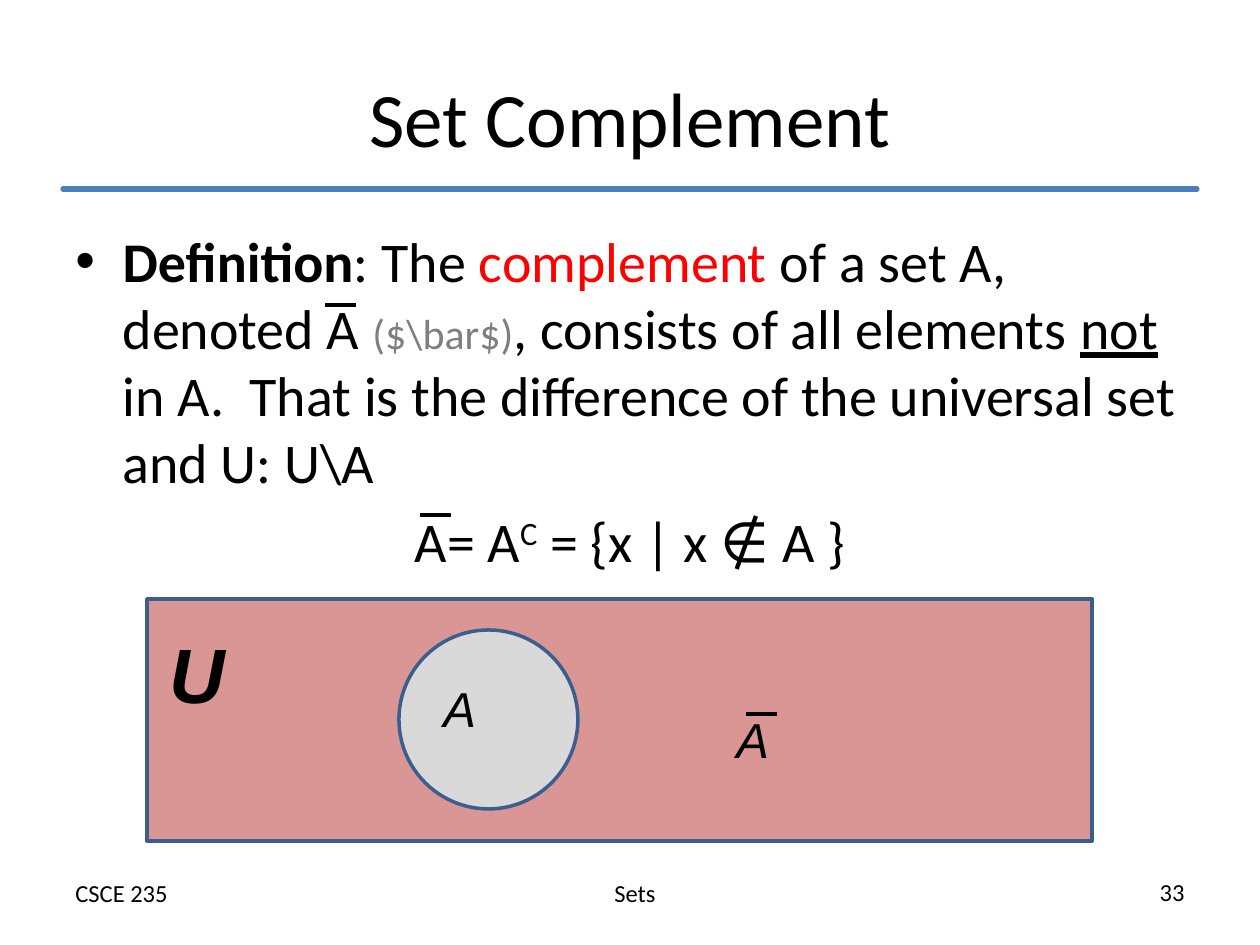
from lxml.etree import SubElement
from pptx import Presentation
from pptx.dml.color import RGBColor
from pptx.enum.shapes import MSO_CONNECTOR, MSO_SHAPE
from pptx.enum.text import MSO_ANCHOR, PP_ALIGN
from pptx.oxml.ns import qn
from pptx.util import Pt

PX = 914400 // 126
BLACK, RED, GRAY = "000000", "FF0000", "7F7F7F"
BLUE, EDGE, PINK, PALE = "4B7EBC", "3A5F8C", "D99694", "D9D9D9"
ALIGN = {"l": PP_ALIGN.LEFT, "c": PP_ALIGN.CENTER, "r": PP_ALIGN.RIGHT}

# Each paragraph is a list of (text, format) runs.
TITLE = [[("Set Complement", {})]]
BODY = [
    [
        ("Definition", {"bold": True}),
        (": The ", {}),
        ("complement ", {"color": RED}),
        ("of a set A, denoted A ", {}),
        ("($\\bar$)", {"color": GRAY, "size": 24}),
        (", consists of all elements ", {}),
        ("not", {"under": True}),
        (" in A.  That is the difference of the universal set and U: U\\A", {}),
    ],
    [("A= A", {}), ("C", {"raised": True}), (" = {x | x ∉ A }", {})],
]
FOOT = [("CSCE 235", 63, 872, "l"), ("Sets", 451, 872, "c"), ("33", 829, 871, "r")]

# Left, top, width, height in px
SHAPES = [
    (MSO_SHAPE.RECTANGLE, (147, 599, 945, 242), PINK),
    (MSO_SHAPE.OVAL, (399, 630, 179, 179), PALE),
]
LABELS = [
    ("U", (157, 620, 73, 106), 44, True),
    ("A", (431, 672, 53, 72), 28, False),
    ("A", (724, 703, 53, 72), 28, False),
]
BARS = [(325, 305), (420, 515), (746, 714)]
BAR_W = 31


def px(*vals):
    return [round(v * PX) for v in vals]


def rgb(code):
    return RGBColor.from_string(code)


def style(run, size=18, face="Calibri", color=BLACK, bold=False,
          slant=False, under=False, raised=False):
    font = run.font
    font.size, font.name = Pt(size), face
    font.color.rgb = rgb(color)
    font.bold, font.italic, font.underline = bold, slant, under
    if raised:
        run._r.get_or_add_rPr().set("baseline", "30000")


def write(slide, box, paras, align="l", middle=False, **base):
    """Add a text box; base is the format that each run may override."""
    frame = slide.shapes.add_textbox(*px(*box)).text_frame
    frame.word_wrap = True
    frame.vertical_anchor = MSO_ANCHOR.MIDDLE if middle else MSO_ANCHOR.TOP
    for i, runs in enumerate(paras):
        para = frame.add_paragraph() if i else frame.paragraphs[0]
        para.alignment = ALIGN[align]
        for text, fmt in runs:
            run = para.add_run()
            run.text = text
            style(run, **{**base, **fmt})
    return frame


def hang(para, mark=None):
    """Give a hanging indent and, if mark is set, a bullet."""
    para.space_before = Pt(6.4)
    props = para._p.get_or_add_pPr()
    props.set("marL", "342900")
    props.set("indent", "-342900")
    if mark:
        SubElement(props, qn("a:buFont")).set("typeface", "Arial")
        SubElement(props, qn("a:buChar")).set("char", mark)
    else:
        SubElement(props, qn("a:buNone"))


def rule(slide, x, y, wide, color, weight, cap="flat"):
    line = slide.shapes.add_connector(
        MSO_CONNECTOR.STRAIGHT, *px(x, y, x + wide, y))
    line.line.color.rgb = rgb(color)
    line.line.width = Pt(weight)
    line.line._get_or_add_ln().set("cap", cap)
    SubElement(line._element.spPr, qn("a:effectLst"))


def draw(slide, kind, box, fill):
    shape = slide.shapes.add_shape(kind, *px(*box))
    shape.shadow.inherit = False
    shape.fill.solid()
    shape.fill.fore_color.rgb = rgb(fill)
    shape.line.color.rgb = rgb(EDGE)
    shape.line.width = Pt(2)


def main():
    deck = Presentation()
    deck.slide_width, deck.slide_height = px(1260, 945)
    slide = deck.slides.add_slide(deck.slide_layouts[6])

    for text, x, y, align in FOOT:
        write(slide, (x, y, 368, 43), [[(text, {})]], align, size=14)
    rule(slide, 63, 189, 1134, BLUE, 3, "rnd")
    write(slide, (63, 38, 1134, 157), TITLE, "c", middle=True, size=44)

    first, last = write(slide, (63, 220, 1134, 624), BODY, size=32).paragraphs
    hang(first, "•")
    hang(last)
    last.alignment = ALIGN["c"]

    for kind, box, fill in SHAPES:
        draw(slide, kind, box, fill)
    for text, box, size, bold in LABELS:
        write(slide, box, [[(text, {})]], size=size, face="Arial",
              bold=bold, slant=True)
    for x, y in BARS:
        rule(slide, x, y, BAR_W, BLACK, 2.25)

    deck.save("out.pptx")


if __name__ == "__main__":
    main()
